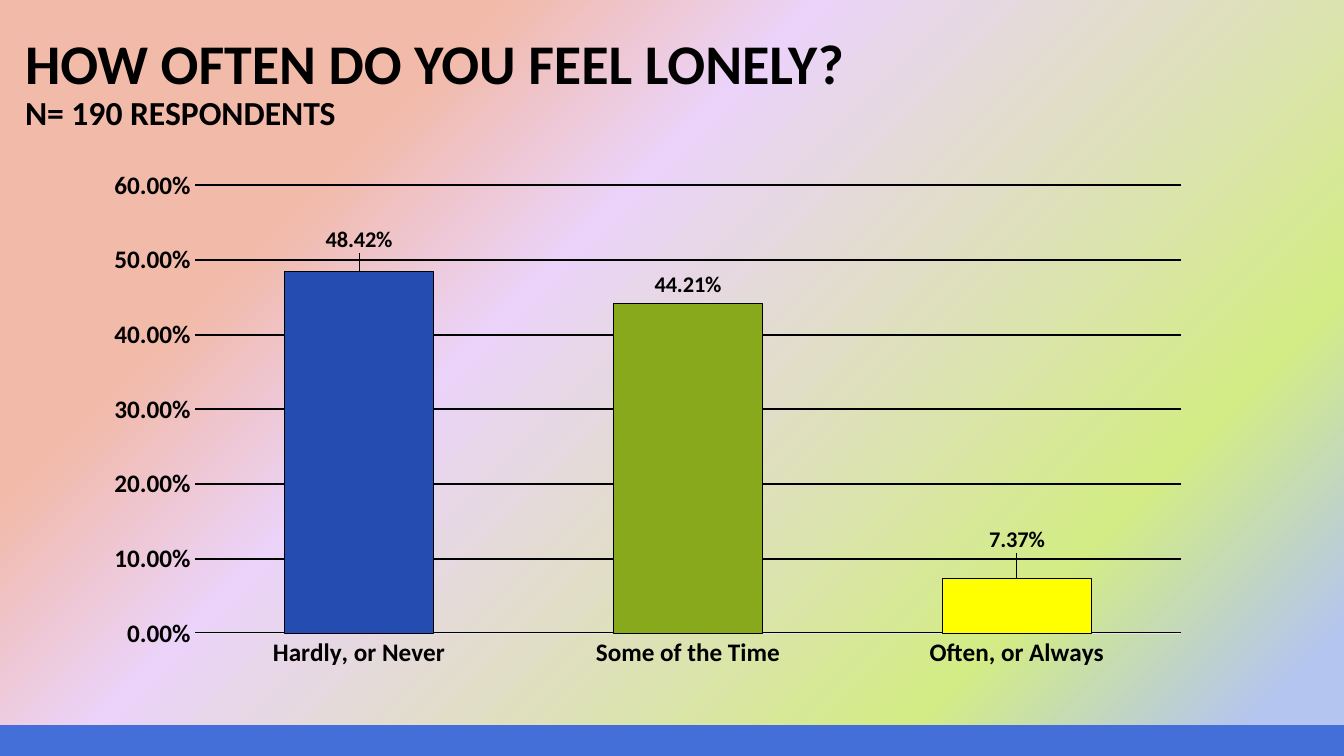
"""Build the loneliness survey slide with its column chart."""
from copy import deepcopy

from lxml import etree
from pptx import Presentation
from pptx.chart.data import CategoryChartData
from pptx.dml.color import RGBColor
from pptx.enum.chart import XL_CHART_TYPE, XL_LABEL_POSITION, XL_TICK_MARK
from pptx.enum.shapes import MSO_SHAPE
from pptx.enum.text import MSO_ANCHOR
from pptx.oxml.ns import qn
from pptx.util import Pt

COLUMN = XL_CHART_TYPE.COLUMN_CLUSTERED
OUTSIDE = XL_LABEL_POSITION.OUTSIDE_END
NO_TICK = XL_TICK_MARK.NONE
RECTANGLE = MSO_SHAPE.RECTANGLE
BOTTOM = MSO_ANCHOR.BOTTOM

COLORS = {"ink": "000000", "footer": "446ED8", "axis": "E6E6E6", "gray": "595959",
          "blue": "254CB0", "green": "87A91B", "yellow": "FFFF00"}
BACKGROUND = [(0.24, "F2BAA9"), (0.39, "EBD3F9"), (0.78, "D3EC85"), (0.94, "B4C5EF")]
FONT = "Calibri"
PERCENT = "0.00%"
HEADING = [("HOW OFTEN DO YOU FEEL LONELY?", 40), ("N= 190 RESPONDENTS", 24)]
ANSWERS = [("Hardly, or Never", 0.4842, "blue", -0.027),
           ("Some of the Time", 0.4421, "green", 0),
           ("Often, or Always", 0.0737, "yellow", -0.04)]
PLOT_AREA = {"x": 0.09, "y": 0.05, "w": 0.89, "h": 0.86}
WIDTH, HEIGHT, FOOTER_HEIGHT = 960, 540, 21.6


def rgb(name):
    return RGBColor.from_string(COLORS[name])


def style_font(font, size, color="ink", bold=True):
    font.name, font.size, font.bold = FONT, Pt(size), bold
    font.color.rgb = rgb(color)


def style_line(line, color, width):
    line.color.rgb = rgb(color)
    line.width = Pt(width)


def add_heading(slide, lines, left, top, width, height, spacing=0.9):
    box = slide.shapes.add_textbox(Pt(left), Pt(top), Pt(width), Pt(height))
    frame = box.text_frame
    frame.word_wrap, frame.vertical_anchor = True, BOTTOM
    para = frame.paragraphs[0]
    para.line_spacing = spacing
    for number, (text, size) in enumerate(lines):
        if number:
            para.add_line_break()
        span = para.add_run()
        span.text = text
        style_font(span.font, size)


def paint_background(slide):
    fill = slide.background.fill
    fill.gradient()
    fill.gradient_angle = 315
    stop_list = next(slide.element.iter(qn("a:gsLst")))
    while len(stop_list) < len(BACKGROUND):
        stop_list.append(deepcopy(stop_list[0]))
    for stop, (position, color) in zip(fill.gradient_stops, BACKGROUND):
        stop.position = position
        stop.color.rgb = RGBColor.from_string(color)


def make_layout(settings):
    layout = etree.Element(qn("c:layout"))
    manual = etree.SubElement(layout, qn("c:manualLayout"))
    for tag, value in settings.items():
        etree.SubElement(manual, qn(f"c:{tag}")).set("val", str(value))
    return layout


def place_plot(chart):
    plot_area = next(chart.element.iter(qn("c:plotArea")))
    for layout in plot_area.findall(qn("c:layout")):
        plot_area.remove(layout)
    settings = {"layoutTarget": "inner", "xMode": "edge", "yMode": "edge", **PLOT_AREA}
    plot_area.insert(0, make_layout(settings))


def style_axes(chart):
    for axis in (chart.category_axis, chart.value_axis):
        axis.major_tick_mark = axis.minor_tick_mark = NO_TICK
        style_font(axis.tick_labels.font, 18)
    style_line(chart.category_axis.format.line, "axis", 0.75)
    values = chart.value_axis
    values.minimum_scale, values.maximum_scale, values.major_unit = 0, 0.6, 0.1
    values.format.line.fill.background()
    values.has_major_gridlines = True
    style_line(values.major_gridlines.format.line, "ink", 1.25)
    values.tick_labels.number_format = PERCENT
    values.tick_labels.number_format_is_linked = False


def style_columns(chart):
    plot = chart.plots[0]
    plot.gap_width, plot.overlap, plot.vary_by_categories = 121, -27, False
    series = plot.series[0]
    series.format.fill.solid()
    series.format.fill.fore_color.rgb = rgb("green")
    style_line(series.format.line, "ink", 0.75)
    labels = series.data_labels
    labels.show_value, labels.position = True, OUTSIDE
    labels.number_format, labels.number_format_is_linked = PERCENT, False
    style_font(labels.font, 16)
    for number, (_, _, color, shift) in enumerate(ANSWERS):
        point = series.points[number]
        point.format.fill.solid()
        point.format.fill.fore_color.rgb = rgb(color)
        style_line(point.format.line, "ink", 0.75)
        if shift:
            point.data_label.position = OUTSIDE
            style_font(point.data_label.font, 16)
            label = series.data_labels._element.findall(qn("c:dLbl"))[-1]
            label.insert(1, make_layout({"x": 0, "y": shift}))


def add_survey_chart(slide, left, top, width, height):
    data = CategoryChartData(number_format=PERCENT)
    data.categories = [answer[0] for answer in ANSWERS]
    data.add_series("Series 1", [answer[1] for answer in ANSWERS])
    chart = slide.shapes.add_chart(
        COLUMN, Pt(left), Pt(top), Pt(width), Pt(height), data).chart
    chart.has_title = chart.has_legend = False
    style_font(chart.font, 10, "gray", False)
    place_plot(chart)
    style_axes(chart)
    style_columns(chart)


def main():
    deck = Presentation()
    deck.slide_width, deck.slide_height = Pt(WIDTH), Pt(HEIGHT)
    page = deck.slides.add_slide(deck.slide_layouts[6])
    paint_background(page)
    footer = page.shapes.add_shape(
        RECTANGLE, 0, Pt(HEIGHT - FOOTER_HEIGHT), Pt(WIDTH), Pt(FOOTER_HEIGHT))
    footer.shadow.inherit = False
    footer.fill.solid()
    footer.fill.fore_color.rgb = rgb("footer")
    style_line(footer.line, "footer", 1)
    add_heading(page, HEADING, 10.8, 8.6, 939, 90)
    add_survey_chart(page, 67.7, 113.8, 792, 372.2)
    deck.save("out.pptx")


if __name__ == "__main__":
    main()
